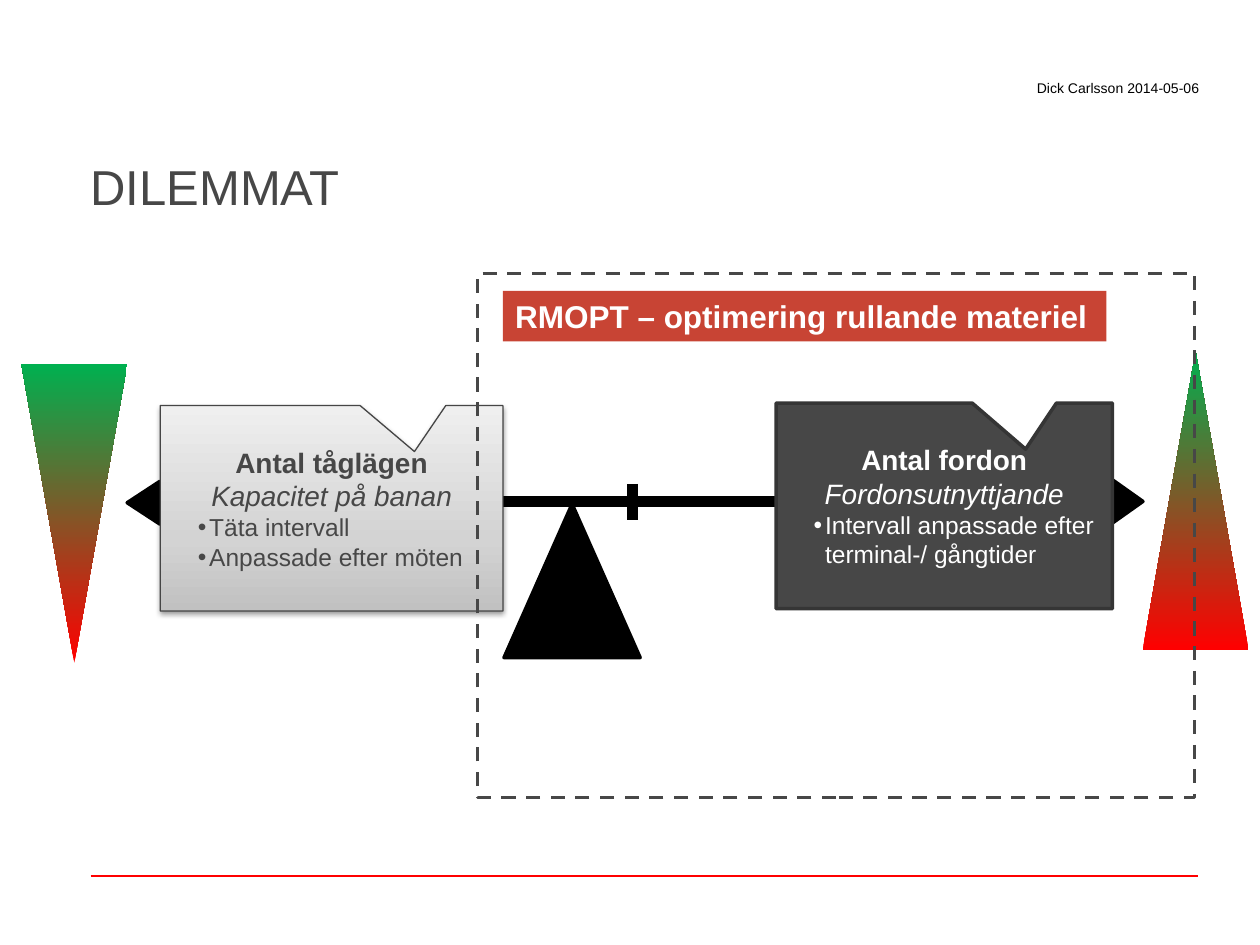
from lxml import etree
from pptx import Presentation
from pptx.dml.color import RGBColor
from pptx.enum.dml import MSO_LINE
from pptx.enum.shapes import MSO_CONNECTOR, MSO_SHAPE
from pptx.enum.text import MSO_ANCHOR, MSO_AUTO_SIZE, PP_ALIGN
from pptx.oxml.ns import qn
from pptx.util import Pt

TRIANGLE, RECT = MSO_SHAPE.ISOSCELES_TRIANGLE, MSO_SHAPE.RECTANGLE
CALLOUT = MSO_SHAPE.RECTANGULAR_CALLOUT
STRAIGHT, DASH = MSO_CONNECTOR.STRAIGHT, MSO_LINE.DASH
TOP, MIDDLE, BOTTOM = MSO_ANCHOR.TOP, MSO_ANCHOR.MIDDLE, MSO_ANCHOR.BOTTOM
LEFT, CENTER, RIGHT = PP_ALIGN.LEFT, PP_ALIGN.CENTER, PP_ALIGN.RIGHT
FIT = MSO_AUTO_SIZE.SHAPE_TO_FIT_TEXT

BLACK = RGBColor(0x00, 0x00, 0x00)
WHITE = RGBColor(0xFF, 0xFF, 0xFF)
GRAY = RGBColor(0x47, 0x47, 0x47)
EDGE_LIGHT = RGBColor(0x45, 0x45, 0x45)
EDGE_DARK = RGBColor(0x35, 0x35, 0x35)
RED = RGBColor(0xFF, 0x00, 0x00)
GREEN = RGBColor(0x00, 0xB0, 0x50)
BRICK = RGBColor(0xC8, 0x44, 0x34)
SILVER = [(0, RGBColor(0xC1, 0xC1, 0xC1)), (35, RGBColor(0xD3, 0xD3, 0xD3)),
          (100, RGBColor(0xEF, 0xEF, 0xEF))]
RED_GREEN = [(0, RED), (100, GREEN)]

prs = Presentation()
prs.slide_width, prs.slide_height = Pt(720), Pt(540)
s = prs.slides.add_slide(prs.slide_layouts[6])


def add_shape(kind, box, fill=None, line=None, width=2, rotation=0, angle=90):
    sp = s.shapes.add_shape(kind, *map(Pt, box))
    sp.shadow.inherit = False
    sp.rotation = rotation
    if isinstance(fill, list):
        sp.fill.gradient()
        sp.fill.gradient_angle = angle
        stops = sp._element.spPr.find(".//" + qn("a:gsLst"))
        stops.clear()
        for pos, color in fill:
            gs = etree.SubElement(stops, qn("a:gs"), pos=str(pos * 1000))
            etree.SubElement(gs, qn("a:srgbClr"), val=str(color))
    elif fill is None:
        sp.fill.background()
    else:
        sp.fill.solid()
        sp.fill.fore_color.rgb = fill
    if line is None:
        sp.line.fill.background()
    else:
        sp.line.color.rgb = line
        sp.line.width = Pt(width)
    return sp


def add_text(sp, lines, color, anchor=MIDDLE, inset=None, wrap=True):
    tf = sp.text_frame
    tf.word_wrap = wrap
    tf.vertical_anchor = anchor
    if inset is not None:
        tf.margin_left = tf.margin_right = tf.margin_top = tf.margin_bottom = Pt(inset)
    for i, (text, align, bullet, fmt) in enumerate(lines):
        p = tf.add_paragraph() if i else tf.paragraphs[0]
        p.alignment = align
        if bullet:
            pPr = p._p.get_or_add_pPr()
            pPr.set("marL", str(Pt(20.9)))
            pPr.set("indent", str(Pt(-6.5)))
            etree.SubElement(pPr, qn("a:buFont"), typeface="Arial")
            etree.SubElement(pPr, qn("a:buChar"), char="•")
        r = p.add_run()
        r.text = text
        r.font.color.rgb = color
        for name, value in ({"name": "Arial"} | fmt).items():
            setattr(r.font, name, value)


def_lines = [
    ((51.8, 500.4, 684.7, 500.4), RED, 1),
    ((172.8, 286.6, 528.5, 286.6), BLACK, 6),
    ((361.4, 276.5, 361.4, 297.4), BLACK, 6),
]
cxns = []
for ends, color, width in def_lines:
    cxn = s.shapes.add_connector(STRAIGHT, *map(Pt, ends))
    cxn.line.color.rgb = color
    cxn.line.width = Pt(width)
    etree.SubElement(cxn._element.spPr, qn("a:effectLst"))
    cxns.append(cxn)

add_shape(TRIANGLE, (69.8, 277.9, 24.5, 18.7), BLACK, BLACK, rotation=270)
add_shape(TRIANGLE, (632.2, 277.9, 24.5, 17.3), BLACK, BLACK, rotation=90)

texts = [
    ((51.8, 59.8, 632.2, 63.4), "DILEMMAT", 28, GRAY, LEFT, BOTTOM),
    ((458.6, 46.1, 226.8, 8.6), "Dick Carlsson 2014-05-06", 8, BLACK, RIGHT, MIDDLE),
]
for box, text, size, color, align, anchor in texts:
    sp = s.shapes.add_textbox(*map(Pt, box))
    add_text(sp, [(text, align, False, {"size": Pt(size)})], color, anchor, 0)

add_shape(TRIANGLE, (288, 288, 77.8, 87.8), BLACK, BLACK)

callouts = [
    ((91.6, 231.8, 195.8, 117.4), SILVER, EDGE_LIGHT, 0.75, GRAY,
     "Antal tåglägen", "Kapacitet på banan",
     ["Täta intervall", "Anpassade efter möten"]),
    ((443.5, 230.4, 192.2, 117.4), GRAY, EDGE_DARK, 2, WHITE,
     "Antal fordon", "Fordonsutnyttjande",
     ["Intervall anpassade efter terminal-/ gångtider"]),
]
for box, fill, line, width, color, heading, subheading, bullets in callouts:
    sp = add_shape(CALLOUT, box, fill, line, width)
    sp.adjustments[0], sp.adjustments[1] = 0.242, -0.276
    lines = [(heading, CENTER, False, {"size": Pt(16), "bold": True}),
             (subheading, CENTER, False, {"size": Pt(16), "italic": True})]
    lines += [(b, LEFT, True, {"size": Pt(14)}) for b in bullets]
    add_text(sp, lines, color)
    if fill is SILVER:
        effects = sp._element.spPr.find(qn("a:effectLst"))
        shadow = etree.SubElement(effects, qn("a:outerShdw"), blurRad=str(Pt(3.1)),
                                  dist=str(Pt(1.6)), dir="5400000", rotWithShape="0")
        clr = etree.SubElement(shadow, qn("a:srgbClr"), val=str(BLACK))
        etree.SubElement(clr, qn("a:alpha"), val="38000")

add_shape(TRIANGLE, (12.2, 208.1, 60.5, 170.6), RED_GREEN, rotation=180, angle=270)
add_shape(TRIANGLE, (653, 200.9, 60.5, 170.6), RED_GREEN)

frame = add_shape(RECT, (272.9, 156.2, 409.7, 299.5), None, GRAY)
frame.line.dash_style = DASH

banner = add_shape(RECT, (287.3, 166.3, 344.9, 28.8), BRICK)
add_text(banner, [("RMOPT – optimering rullande materiel", LEFT, False,
                   {"size": Pt(18), "bold": True})], WHITE, TOP, wrap=False)
banner.text_frame.auto_size = FIT

prs.save("out.pptx")
